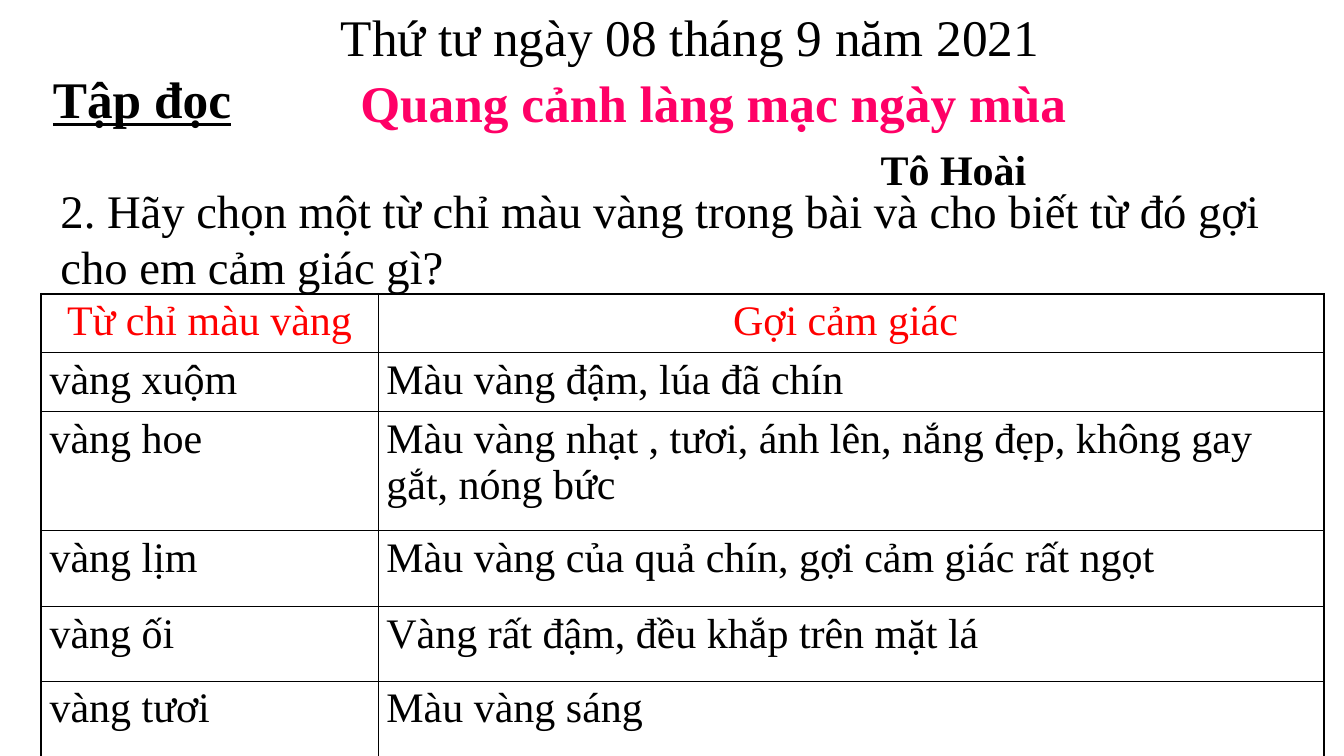
from dataclasses import dataclass

from lxml.etree import SubElement
from pptx import Presentation
from pptx.dml.color import RGBColor
from pptx.enum.text import MSO_ANCHOR, MSO_AUTO_SIZE, PP_ALIGN
from pptx.oxml.ns import qn
from pptx.util import Emu, Inches, Pt

COLUMNS, ROWS = 16, 9


@dataclass(frozen=True)
class Theme:
    font: str = "Times New Roman"
    ink: str = "000000"
    lesson: str = "FF0066"
    header: str = "FF0000"
    heading_size: int = 44
    question_size: int = 40
    text_size: int = 36
    leading: float = 1.2
    outer_line: float = 2.25
    inner_line: float = 1


class LessonSlide:
    def __init__(self, prs, theme):
        self.prs, self.theme = prs, theme
        self.s = prs.slides.add_slide(prs.slide_layouts[1])

    def x(self, columns):
        return Emu(round(self.prs.slide_width * columns / COLUMNS))

    def y(self, rows):
        return Emu(round(self.prs.slide_height * rows / ROWS))

    def box(self, left, top, width, height):
        return self.x(left), self.y(top), self.x(width), self.y(height)

    def add_text(self, p, text, size, color=None, align=PP_ALIGN.LEFT, bold=False, underline=False):
        p.alignment = align
        r = p.add_run()
        r.text = text
        r.font.name, r.font.size = self.theme.font, Pt(size)
        r.font.bold, r.font.underline = bold, underline
        r.font.color.rgb = RGBColor.from_string(color or self.theme.ink)

    def fill_frame(self, sp, area, text, size, inset=(0.12, 0.06), **style):
        sp.left, sp.top, sp.width, sp.height = self.box(*area)
        tf = sp.text_frame
        tf.word_wrap, tf.auto_size = True, MSO_AUTO_SIZE.NONE
        tf.vertical_anchor = MSO_ANCHOR.TOP
        tf.margin_left = tf.margin_right = Inches(inset[0])
        tf.margin_top = tf.margin_bottom = Inches(inset[1])
        p = tf.paragraphs[0]
        p.space_before = Pt(0)
        p.line_spacing = Pt(size * self.theme.leading)
        self.add_text(p, text, size, **style)
        return p

    def title(self, area, text, **style):
        self.fill_frame(self.s.shapes.title, area, text, self.theme.heading_size, **style)

    def body(self, area, text, **style):
        p = self.fill_frame(self.s.placeholders[1], area, text, self.theme.question_size,
                            inset=(0.14, 0.07), **style)
        pPr = p._p.get_or_add_pPr()
        pPr.set("marL", "0")
        pPr.set("indent", "0")
        SubElement(pPr, qn("a:buNone"))

    def label(self, area, text, size, **style):
        self.fill_frame(self.s.shapes.add_textbox(*self.box(*area)), area, text, size, **style)

    def border(self, cell, edges):
        """Draw the cell's left, right, top and bottom lines; edges tells which are outer."""
        tcPr = cell._tc.get_or_add_tcPr()
        for side, outer in zip("LRTB", edges):
            width = self.theme.outer_line if outer else self.theme.inner_line
            ln = SubElement(tcPr, qn(f"a:ln{side}"), w=str(Pt(width)))
            SubElement(SubElement(ln, qn("a:solidFill")), qn("a:srgbClr"), val=self.theme.ink)

    def table(self, area, widths, heights, content):
        rows, cols = len(heights), len(widths)
        table = self.s.shapes.add_table(rows, cols, *self.box(*area)).table
        table.first_row = table.horz_banding = False
        for column, width in zip(table.columns, widths):
            column.width = self.x(width)
        for row, height in zip(table.rows, heights):
            row.height = self.y(height)
        for i, texts in enumerate(content):
            style = {"color": self.theme.header, "align": PP_ALIGN.CENTER} if i == 0 else {}
            for j, text in enumerate(texts):
                cell = table.cell(i, j)
                self.border(cell, (j == 0, j == cols - 1, i == 0, i == rows - 1))
                cell.fill.background()
                self.add_text(cell.text_frame.paragraphs[0], text, self.theme.text_size, **style)


def main():
    prs = Presentation()
    prs.slide_width, prs.slide_height = Inches(16), Inches(9)
    theme = Theme()
    slide = LessonSlide(prs, theme)

    slide.title((3.83, 0.79, 9.33, 0.86), "Quang cảnh làng mạc ngày mùa",
                color=theme.lesson, align=PP_ALIGN.CENTER, bold=True)
    slide.label((9.34, 1.65, 3, 0.72), "Tô Hoài", theme.text_size,
                align=PP_ALIGN.RIGHT, bold=True)
    slide.body((0.58, 2.1, 15.08, 1.49),
               "2. Hãy chọn một từ chỉ màu vàng trong bài và cho biết từ đó gợi cho em cảm giác gì?")
    slide.table((0.49, 3.5, 15.27, 5.5), (4.01, 11.26), (0.7, 0.7, 1.42, 0.9, 0.89, 0.9), [
        ("Từ chỉ màu vàng", "Gợi cảm giác "),
        ("vàng xuộm", "Màu vàng đậm, lúa đã chín"),
        ("vàng hoe", "Màu vàng nhạt , tươi, ánh lên, nắng đẹp, không gay gắt, nóng bức"),
        ("vàng lịm", "Màu vàng của quả chín, gợi cảm giác rất ngọt"),
        ("vàng ối", "Vàng rất đậm, đều khắp trên mặt lá"),
        ("vàng tươi", "Màu vàng sáng"),
    ])
    slide.label((0.58, 0, 15.28, 0.86), "Thứ tư ngày 08 tháng 9 năm 2021",
                theme.heading_size, align=PP_ALIGN.CENTER)
    slide.label((0.51, 0.74, 3.2, 0.86), "Tập đọc", theme.heading_size,
                bold=True, underline=True)
    prs.save("out.pptx")


if __name__ == "__main__":
    main()
